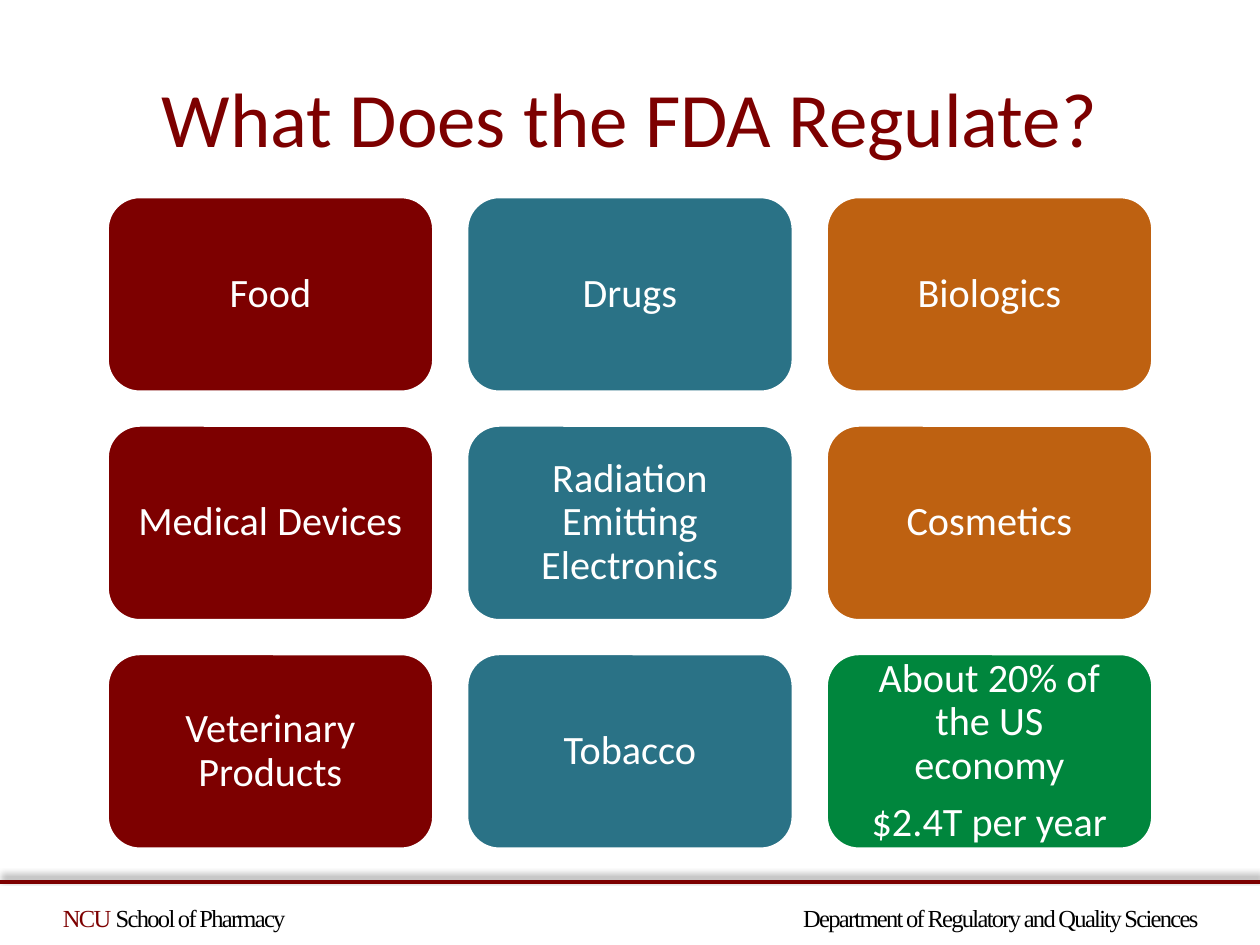
from lxml import etree
from pptx import Presentation
from pptx import util as u
from pptx.dml.color import RGBColor
from pptx.enum import shapes, text
from pptx.oxml import parse_xml
from pptx.oxml.ns import nsdecls, qn

MAROON = RGBColor(0x7D, 0x00, 0x00)
TEAL = RGBColor(0x2A, 0x72, 0x86)
ORANGE = RGBColor(0xBE, 0x61, 0x11)
GREEN = RGBColor(0x00, 0x86, 0x3D)
WHITE = RGBColor(0xFF, 0xFF, 0xFF)
BLACK = RGBColor(0x00, 0x00, 0x00)

WIDTH, HEIGHT = 10, 7.5
COLUMNS, GAP = 3, 0.26
COLUMN_COLOURS = [MAROON, TEAL, ORANGE]
TOPICS = [
    "Food", "Drugs", "Biologics",
    "Medical Devices", "Radiation Emitting Electronics", "Cosmetics",
    "Veterinary Products", "Tobacco",
    "About 20% of the US economy\n$2.4T per year",
]


def inches(*lengths):
    return [u.Inches(n) for n in lengths]


def set_frame(tf, left, top, right, bottom):
    """Set the insets, wrap the text and centre it vertically."""
    tf.word_wrap = True
    tf.vertical_anchor = text.MSO_ANCHOR.MIDDLE
    tf.margin_left, tf.margin_top, tf.margin_right, tf.margin_bottom = inches(
        left, top, right, bottom)


def style_run(r, font, size, colour):
    r.font.name = font
    r.font.size = u.Pt(size)
    r.font.color.rgb = colour


def add_title(s, box, title):
    sp = s.shapes.add_textbox(*inches(*box))
    tf = sp.text_frame
    tf.text = title
    set_frame(tf, 0.1, 0.05, 0.1, 0.05)
    p = tf.paragraphs[0]
    p.alignment = text.PP_ALIGN.CENTER
    style_run(p.runs[0], "Calibri", 44, MAROON)


def add_tile(s, box, label, colour):
    sp = s.shapes.add_shape(shapes.MSO_SHAPE.ROUNDED_RECTANGLE, *inches(*box))
    sp.shadow.inherit = False
    sp.fill.solid()
    sp.fill.fore_color.rgb = colour
    sp.line.color.rgb = WHITE
    sp.line.width = u.Pt(2)
    tf = sp.text_frame
    tf.text = label
    set_frame(tf, 0.17, 0.17, 0.17, 0.17)
    for i, p in enumerate(tf.paragraphs):
        p.alignment = text.PP_ALIGN.CENTER
        p.line_spacing = 0.9
        if i:
            p.space_before = u.Pt(8)
        style_run(p.runs[0], "Calibri", 23, WHITE)


def add_tile_grid(s, box, labels):
    left, top, width, height = box
    rows = len(labels) // COLUMNS
    w = (width - GAP * (COLUMNS - 1)) / COLUMNS
    h = (height - GAP * (rows - 1)) / rows
    for i, label in enumerate(labels):
        row, col = divmod(i, COLUMNS)
        colour = GREEN if i == len(labels) - 1 else COLUMN_COLOURS[col]
        place = (left + col * (w + GAP), top + row * (h + GAP), w, h)
        add_tile(s, place, label, colour)


def add_footer(s, box):
    """Draw a shadowed rule at the top of the box and a line of text below."""
    left, top, width, height = box
    rule = s.shapes.add_connector(
        shapes.MSO_CONNECTOR.STRAIGHT, *inches(left, top, left + width, top))
    rule.line.color.rgb = MAROON
    rule.line.width = u.Pt(2)
    rule._element.spPr.append(parse_xml(
        f'<a:effectLst {nsdecls("a")}>'
        '<a:outerShdw blurRad="50800" dist="38100" dir="16200000" rotWithShape="0">'
        '<a:srgbClr val="000000"><a:alpha val="40000"/></a:srgbClr>'
        '</a:outerShdw></a:effectLst>'))

    sp = s.shapes.add_textbox(*inches(left, top + 0.07, width, height - 0.07))
    tf = sp.text_frame
    set_frame(tf, 0.5, 0, 0, 0)
    p = tf.paragraphs[0]
    tabs = etree.SubElement(p._p.get_or_add_pPr(), qn("a:tabLst"))
    etree.SubElement(tabs, qn("a:tab"), pos=str(u.Inches(width - 0.99)), algn="r")
    parts = [
        ("NCU", MAROON),
        (" School of Pharmacy\tDepartment of Regulatory and Quality Sciences", BLACK),
    ]
    for words, colour in parts:
        r = p.add_run()
        r.text = words
        style_run(r, "Times New Roman", 14, colour)
        r.font._element.set("spc", "-100")


def main():
    prs = Presentation()
    prs.slide_width, prs.slide_height = inches(WIDTH, HEIGHT)
    s = prs.slides.add_slide(prs.slide_layouts[6])
    add_footer(s, (0, 7, WIDTH, 0.5))
    add_title(s, (0.5, 0.3, 9, 1.25), "What Does the FDA Regulate?")
    add_tile_grid(s, (0.85, 1.56, 8.3, 5.18), TOPICS)
    prs.save("out.pptx")


if __name__ == "__main__":
    main()
